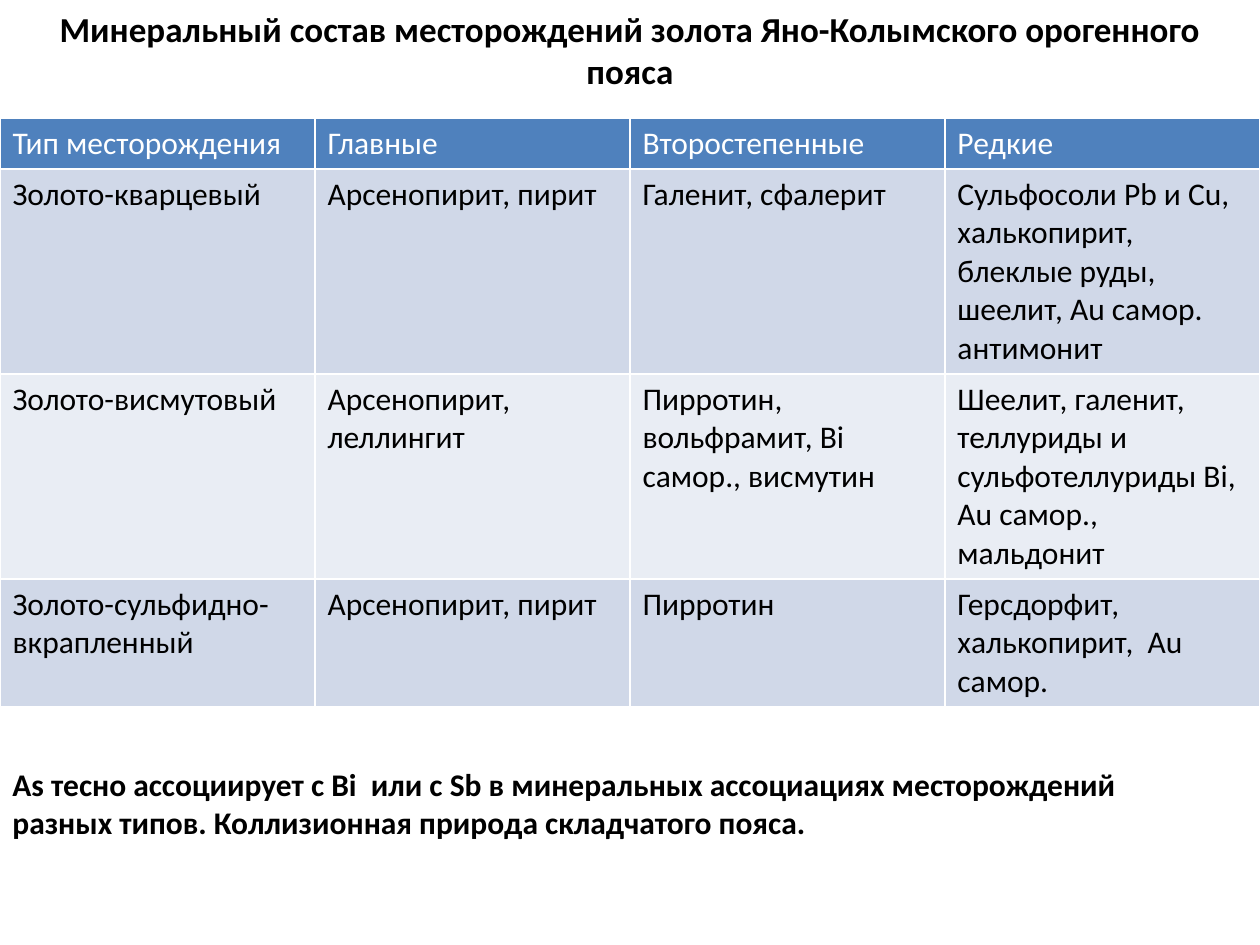
from typing import NamedTuple

from pptx import Presentation
from pptx.dml.color import RGBColor
from pptx.enum.text import MSO_ANCHOR, MSO_AUTO_SIZE, PP_ALIGN
from pptx.util import Pt

PX = 914400 // 126
FONT = "Calibri"
BLACK, WHITE = "000000", "FFFFFF"
HEADER_FILL = "4F81BD"
BAND_FILLS = ("E9EDF4", "D0D8E8")
TITLE_ONLY = 5
CENTER = PP_ALIGN.CENTER
MIDDLE = MSO_ANCHOR.MIDDLE
NO_AUTOFIT, GROW = MSO_AUTO_SIZE.NONE, MSO_AUTO_SIZE.SHAPE_TO_FIT_TEXT


class Box(NamedTuple):
    left: int
    top: int
    width: int
    height: int

    def emu(self) -> list[int]:
        return [v * PX for v in self]


class Deposit(NamedTuple):
    """One table row: deposit type and its minerals by abundance."""
    kind: str
    main: str
    minor: str
    rare: str
    height: int


SLIDE_W, SLIDE_H = 1260, 945
TITLE_BOX = Box(0, 0, SLIDE_W, 98)
TABLE_BOX = Box(0, 118, SLIDE_W, 589)
NOTE_BOX = Box(0, 759, 1231, 89)

TITLE = "Минеральный состав месторождений золота Яно-Колымского орогенного пояса"
NOTE = ("As тесно ассоциирует с Bi  или с Sb в минеральных ассоциациях "
        "месторождений разных типов. Коллизионная природа складчатого пояса.")
ROWS = [
    Deposit("Тип месторождения", "Главные", "Второстепенные", "Редкие", 51),
    Deposit("Золото-кварцевый", "Арсенопирит, пирит", "Галенит, сфалерит",
            "Сульфосоли Pb и Cu, халькопирит, блеклые руды, шеелит, "
            "Au самор. антимонит", 205),
    Deposit("Золото-висмутовый", "Арсенопирит, леллингит",
            "Пирротин, вольфрамит, Bi самор., висмутин",
            "Шеелит, галенит, теллуриды и сульфотеллуриды Bi, "
            "Au самор., мальдонит", 205),
    Deposit("Золото-сульфидно-вкрапленный", "Арсенопирит, пирит", "Пирротин",
            "Герсдорфит, халькопирит,  Au самор.", 128),
]


def rgb(color: str) -> RGBColor:
    return RGBColor.from_string(color)


def write(tf, text: str, size: int, color: str, bold: bool) -> None:
    tf.text = text
    font = tf.paragraphs[0].font
    font.name, font.size, font.bold = FONT, Pt(size), bold
    font.color.rgb = rgb(color)


def add_title(s) -> None:
    sp = s.shapes.title
    sp.left, sp.top, sp.width, sp.height = TITLE_BOX.emu()
    tf = sp.text_frame
    write(tf, TITLE, 20, BLACK, True)
    tf.word_wrap, tf.auto_size = True, NO_AUTOFIT
    tf.vertical_anchor = MIDDLE
    tf.paragraphs[0].alignment = CENTER


def add_deposit_table(s) -> None:
    columns = len(Deposit._fields) - 1
    table = s.shapes.add_table(len(ROWS), columns, *TABLE_BOX.emu()).table
    for column in table.columns:
        column.width = TABLE_BOX.width // columns * PX
    for i, deposit in enumerate(ROWS):
        table.rows[i].height = deposit.height * PX
        fill = BAND_FILLS[i % 2] if i else HEADER_FILL
        for j, text in enumerate(deposit[:columns]):
            cell = table.cell(i, j)
            cell.fill.solid()
            cell.fill.fore_color.rgb = rgb(fill)
            write(cell.text_frame, text, 18, BLACK if i else WHITE, False)


def add_note(s) -> None:
    tf = s.shapes.add_textbox(*NOTE_BOX.emu()).text_frame
    tf.word_wrap, tf.auto_size = True, GROW
    write(tf, NOTE, 18, BLACK, True)


def main() -> None:
    prs = Presentation()
    prs.slide_width, prs.slide_height = SLIDE_W * PX, SLIDE_H * PX
    s = prs.slides.add_slide(prs.slide_layouts[TITLE_ONLY])
    add_title(s)
    add_deposit_table(s)
    add_note(s)
    prs.save("out.pptx")


if __name__ == "__main__":
    main()
